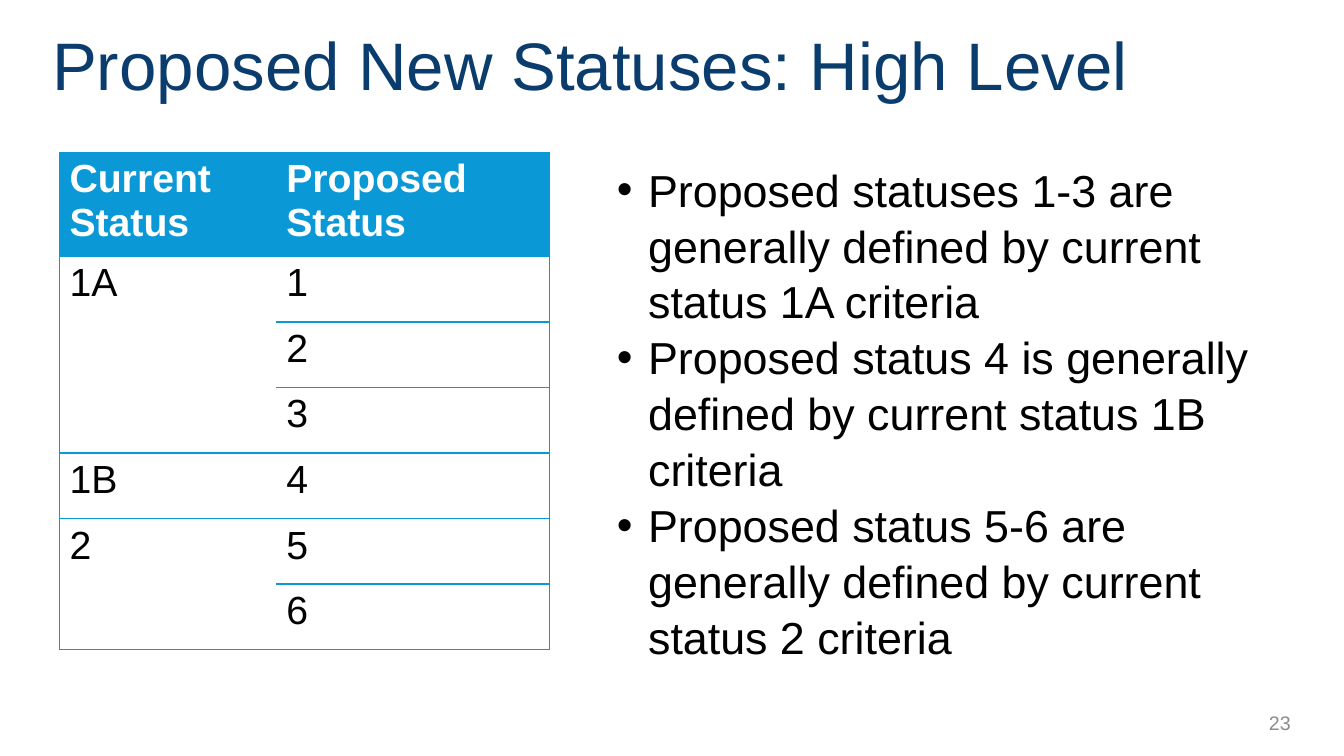
from lxml import etree
from pptx import Presentation
from pptx.dml.color import RGBColor
from pptx.enum.text import MSO_ANCHOR, PP_ALIGN
from pptx.oxml.ns import qn
from pptx.util import Inches, Pt

MIDDLE, TOP = MSO_ANCHOR.MIDDLE, MSO_ANCHOR.TOP
LEFT, RIGHT = PP_ALIGN.LEFT, PP_ALIGN.RIGHT
NAVY = RGBColor(0x0A, 0x3C, 0x6E)
BLUE = RGBColor(0x0A, 0x98, 0xD6)
GRAY = RGBColor(0x8C, 0x8C, 0x8C)
BLACK = RGBColor(0, 0, 0)
WHITE = RGBColor(0xFF, 0xFF, 0xFF)

STATUSES = [
    ("Current Status", "Proposed Status"),
    ("1A", "1"),
    ("", "2"),
    ("", "3"),
    ("1B", "4"),
    ("2", "5"),
    ("", "6"),
]
MERGES = [(1, 3), (5, 6)]
CRITERIA = [
    "Proposed statuses 1-3 are generally defined by current status 1A criteria",
    "Proposed status 4 is generally defined by current status 1B criteria",
    "Proposed status 5-6 are generally defined by current status 2 criteria",
]


class SlideBuilder:
    font = "Arial"

    def __init__(self, prs):
        self.s = prs.slides.add_slide(prs.slide_layouts[6])

    def style(self, p, size, color, bold=False):
        for r in p.runs:
            r.font.name = self.font
            r.font.size = Pt(size)
            r.font.color.rgb = color
            r.font.bold = bold

    def text(self, box, lines, size, color, anchor=TOP, align=LEFT):
        tf = self.s.shapes.add_textbox(*map(Inches, box)).text_frame
        tf.word_wrap = True
        tf.vertical_anchor = anchor
        tf.text = "\n".join(lines)
        for p in tf.paragraphs:
            p.alignment = align
            self.style(p, size, color)
        return tf

    def bullets(self, box, lines, size, color, indent):
        for p in self.text(box, lines, size, color).paragraphs:
            pPr = p._p.get_or_add_pPr()
            pPr.set("marL", str(Inches(indent)))
            pPr.set("indent", str(-Inches(indent)))
            etree.SubElement(pPr, qn("a:buFont"), typeface=self.font)
            etree.SubElement(pPr, qn("a:buChar"), char="•")
            p.line_spacing = 1.045

    def borders(self, cell, sides):
        """Draw the given sides (L, R, T, B) and clear the others."""
        tcPr = cell._tc.get_or_add_tcPr()
        for side in "LRTB":
            ln = etree.SubElement(tcPr, qn(f"a:ln{side}"), w=str(Pt(1)))
            if side in sides:
                fill = etree.SubElement(ln, qn("a:solidFill"))
                etree.SubElement(fill, qn("a:srgbClr"), val=str(BLUE))
            else:
                etree.SubElement(ln, qn("a:noFill"))

    def table(self, left, top, widths, heights, rows, merges, size):
        """Build the table; merges are (first, last) rows of the first column."""
        box = (left, top, sum(widths), sum(heights))
        table = self.s.shapes.add_table(
            len(rows), len(widths), *map(Inches, box)).table
        for column, width in zip(table.columns, widths):
            column.width = Inches(width)
        for row, height in zip(table.rows, heights):
            row.height = Inches(height)
        for first, last in merges:
            table.cell(first, 0).merge(table.cell(last, 0))
        for i, row in enumerate(rows):
            for j, value in enumerate(row):
                cell = table.cell(i, j)
                top_side = "" if cell.is_spanned else "T"
                inside = j == 0 and any(a <= i < b for a, b in merges)
                bottom_side = "" if inside and cell.is_spanned else "B"
                self.borders(cell, "LR"[j] + top_side + bottom_side)
                if i == 0:
                    cell.fill.solid()
                    cell.fill.fore_color.rgb = BLUE
                else:
                    cell.fill.background()
                if not cell.is_spanned:
                    cell.text = value
                    p = cell.text_frame.paragraphs[0]
                    self.style(p, size, BLACK if i else WHITE, bold=i == 0)


def main():
    prs = Presentation()
    prs.slide_width, prs.slide_height = Inches(13.33), Inches(7.5)
    b = SlideBuilder(prs)
    b.text((0.42, 0.17, 12.74, 0.93), ["Proposed New Statuses: High Level"],
           48, NAVY, MIDDLE)
    b.text((10.64, 6.97, 2.26, 0.4), ["23"], 14, GRAY, MIDDLE, RIGHT)
    b.table(0.59, 1.51, [2.15, 2.71], [0.97] + [0.65] * 6,
            STATUSES, MERGES, 28)
    b.bullets((6.02, 1.54, 6.87, 4.95), CRITERIA, 32, BLACK, 0.31)
    prs.save("out.pptx")


if __name__ == "__main__":
    main()
